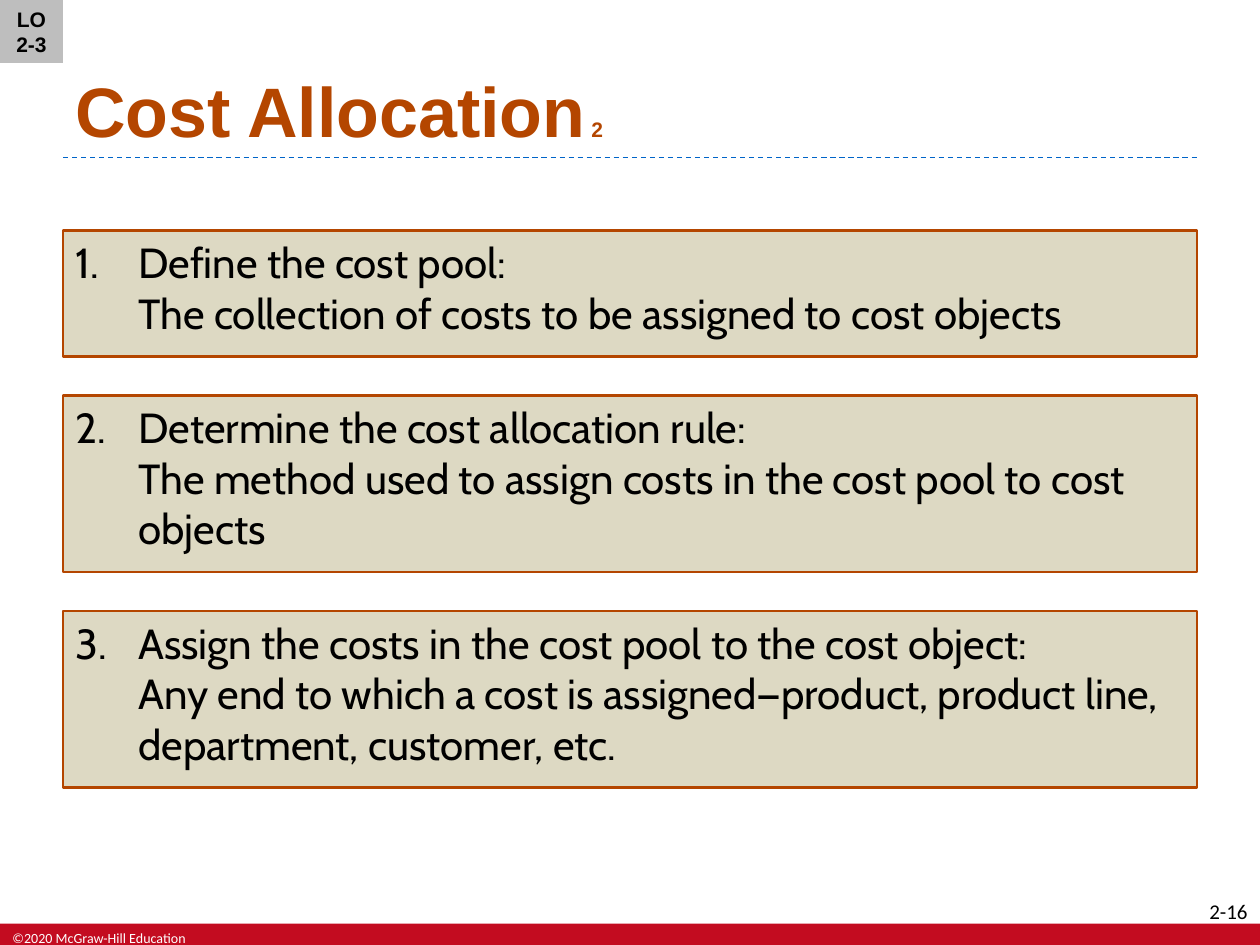
from lxml.etree import SubElement
from pptx import Presentation
from pptx.dml.color import RGBColor
from pptx.enum.dml import MSO_LINE
from pptx.enum.shapes import MSO_CONNECTOR, MSO_SHAPE
from pptx.enum.text import MSO_ANCHOR, PP_ALIGN
from pptx.oxml.ns import qn
from pptx.util import Inches, Pt

RUST = RGBColor(0xB4, 0x46, 0x00)
SAND = RGBColor(0xDD, 0xD9, 0xC3)
RED = RGBColor(0xC3, 0x0C, 0x20)
BLUE = RGBColor(0x00, 0x64, 0xC8)
GREY = RGBColor(0xBE, 0xBE, 0xBE)
BLACK = RGBColor(0x00, 0x00, 0x00)
WHITE = RGBColor(0xFF, 0xFF, 0xFF)

MARGIN, CONTENT_WIDTH = 0.5, 9
FIRST_STEP_TOP, STEP_GAP = 1.83, 0.31
STEPS = [
    (1, ["Define the cost pool:",
         "The collection of costs to be assigned to cost objects"]),
    (1.4, ["Determine the cost allocation rule:",
           "The method used to assign costs in the cost pool to cost objects"]),
    (1.4, ["Assign the costs in the cost pool to the cost object:",
           "Any end to which a cost is assigned—product, product line, "
           "department, customer, etc."]),
]


def add_run(paragraph, text, font_name, size, color, bold=False):
    run = paragraph.add_run()
    run.text = text
    run.font.name = font_name
    run.font.size = Pt(size)
    run.font.color.rgb = color
    run.font.bold = bold


def add_panel(slide, left, top, width, height, fill, border=None):
    panel = slide.shapes.add_shape(
        MSO_SHAPE.RECTANGLE, Inches(left), Inches(top), Inches(width), Inches(height))
    panel.shadow.inherit = False
    panel.fill.solid()
    panel.fill.fore_color.rgb = fill
    if border is None:
        panel.line.fill.background()
    else:
        panel.line.color.rgb = border
        panel.line.width = Pt(1.5)
    return panel


def add_label(slide, left, top, width, height, align=PP_ALIGN.LEFT, anchor=MSO_ANCHOR.TOP):
    frame = slide.shapes.add_textbox(
        Inches(left), Inches(top), Inches(width), Inches(height)).text_frame
    frame.word_wrap = True
    frame.vertical_anchor = anchor
    paragraph = frame.paragraphs[0]
    paragraph.alignment = align
    return paragraph


def add_dashed_rule(slide, top):
    rule = slide.shapes.add_connector(
        MSO_CONNECTOR.STRAIGHT, Inches(MARGIN), Inches(top),
        Inches(MARGIN + CONTENT_WIDTH), Inches(top))
    rule.line.color.rgb = BLUE
    rule.line.width = Pt(0.75)
    rule.line.dash_style = MSO_LINE.DASH
    SubElement(rule.line._get_or_add_ln().getparent(), qn("a:effectLst"))


def number_paragraph(paragraph, number):
    properties = paragraph._p.get_or_add_pPr()
    properties.set("marL", str(Inches(0.5)))
    properties.set("indent", str(Inches(-0.5)))
    SubElement(properties, qn("a:buFont"), typeface="+mj-lt")
    SubElement(properties, qn("a:buAutoNum"), type="arabicPeriod", startAt=str(number))


def add_step(slide, number, top, height, lines):
    frame = add_panel(slide, MARGIN, top, CONTENT_WIDTH, height, SAND, RUST).text_frame
    frame.word_wrap = True
    frame.vertical_anchor = MSO_ANCHOR.TOP
    paragraph = frame.paragraphs[0]
    paragraph.alignment = PP_ALIGN.LEFT
    number_paragraph(paragraph, number)
    for index, line in enumerate(lines):
        if index:
            paragraph.add_line_break()
        add_run(paragraph, line, "Cabin", 24, BLACK)


def add_objective_badge(slide):
    frame = add_panel(slide, 0, 0, 0.5, 0.5, GREY).text_frame
    frame.word_wrap = True
    frame.vertical_anchor = MSO_ANCHOR.MIDDLE
    paragraph = frame.paragraphs[0]
    paragraph.alignment = PP_ALIGN.CENTER
    add_run(paragraph, "LO 2-3", "Arial", 12, BLACK, bold=True)


def main():
    presentation = Presentation()
    presentation.slide_width = Inches(10)
    presentation.slide_height = Inches(7.5)
    slide = presentation.slides.add_slide(presentation.slide_layouts[6])

    # Footer band, copyright and page number
    add_panel(slide, 0, 7.33, 10, 0.17, RED)
    copyright_line = add_label(slide, 0, 7.33, 1.6, 0.17)
    add_run(copyright_line, "©2020 McGraw-Hill Education", "Calibri", 8, WHITE)
    page_number = add_label(slide, 9.46, 7.08, 0.54, 0.2, PP_ALIGN.RIGHT)
    add_run(page_number, "2-16", "Calibri", 12, BLACK)

    # Title above a dashed rule
    add_dashed_rule(slide, 1.25)
    title = add_label(slide, MARGIN, 0.05, CONTENT_WIDTH, 1.2, anchor=MSO_ANCHOR.BOTTOM)
    add_run(title, "Cost Allocation", "Arial", 40, RUST, bold=True)
    add_run(title, " 2", "Arial", 12, RUST, bold=True)

    # Numbered steps, stacked with equal gaps
    top = FIRST_STEP_TOP
    for number, (height, lines) in enumerate(STEPS, start=1):
        add_step(slide, number, top, height, lines)
        top += height + STEP_GAP

    # Learning objective badge
    add_objective_badge(slide)

    presentation.save("out.pptx")


if __name__ == "__main__":
    main()
